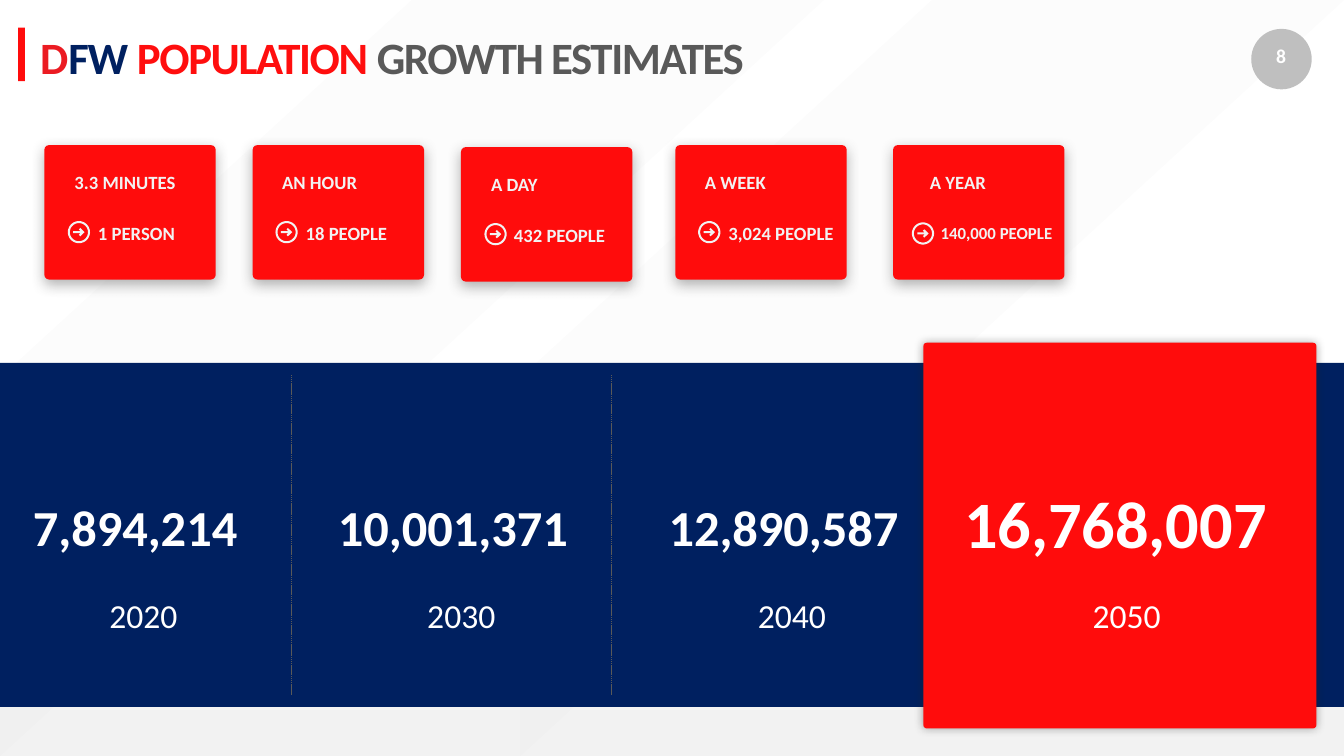
from math import cos, pi, sin

from pptx import Presentation
from pptx.dml.color import RGBColor
from pptx.enum.dml import MSO_LINE
from pptx.enum.shapes import MSO_CONNECTOR, MSO_SHAPE as SHAPE
from pptx.enum.text import MSO_AUTO_SIZE, PP_ALIGN
from pptx.oxml.ns import qn
from pptx.util import Pt
from lxml.etree import SubElement

PX = 9144  # 100 px to the inch
COLORS = {
    "white": "FFFFFF", "pale": "F2F2F2", "stripe": "D9D9D9", "silver": "BFBFBF",
    "gray": "595959", "navy": "002060", "red": "FF0C0C",
    "title_red": "FF0E0E", "crimson": "EB1B22",
    "soft_shadow": "404040", "dark_shadow": "262626",
}
RGB = {name: RGBColor.from_string(value) for name, value in COLORS.items()}

prs = Presentation()
prs.slide_width, prs.slide_height = 2000 * PX, 1125 * PX
slide = prs.slides.add_slide(prs.slide_layouts[6])
shapes = slide.shapes


def add_block(preset, x, y, w, h, color, corner=None, shadow=None):
    """Add a borderless shape; shadow is (color, blur pt, distance pt)."""
    block = shapes.add_shape(preset, x * PX, y * PX, w * PX, h * PX)
    block.fill.solid()
    block.fill.fore_color.rgb = RGB[color]
    block.line.fill.background()
    block.shadow.inherit = False
    if corner is not None:
        block.adjustments[0] = corner
    if shadow:
        tint, blur, distance = shadow
        effects = block._element.spPr.find(qn("a:effectLst"))
        outer = SubElement(effects, qn("a:outerShdw"), blurRad=str(Pt(blur)),
                           dist=str(Pt(distance)), dir="5400000", rotWithShape="0")
        shade = SubElement(outer, qn("a:srgbClr"), val=COLORS[tint])
        SubElement(shade, qn("a:alpha"), val="40000")
    return block


def add_text(runs, x, y, w, h, size, bold=True, wrap=False):
    """Add a one-paragraph text box from (text, color) runs."""
    box = shapes.add_textbox(x * PX, y * PX, w * PX, h * PX)
    frame = box.text_frame
    frame.word_wrap = wrap
    frame.auto_size = MSO_AUTO_SIZE.SHAPE_TO_FIT_TEXT
    line = frame.paragraphs[0]
    line.font.name, line.font.size, line.font.bold = "Calibri", Pt(size), bold
    for text, color in runs:
        run = line.add_run()
        run.text = text
        run.font.color.rgb = RGB[color]
    return box


# Backdrop
backdrop = slide.background.fill
backdrop.gradient()
backdrop.gradient_angle = 270
for stop, position, color in zip(backdrop.gradient_stops, (0.57, 1), ("white", "pale")):
    stop.position = position
    stop.color.rgb = RGB[color]
for x in (0, 774):
    stripe = add_block(SHAPE.DIAGONAL_STRIPE, x, 0, 1226, 1125, "stripe")
    tint = stripe._element.spPr.find(qn("a:solidFill"))[0]
    SubElement(tint, qn("a:alpha"), val="8000")

# Page number
add_block(SHAPE.OVAL, 1862, 43, 90, 90, "silver")
page_number = add_text([("8", "white")], 1852, 50, 109, 75, 21, wrap=True)
page_frame = page_number.text_frame
page_frame.auto_size = MSO_AUTO_SIZE.NONE
page_frame.margin_left = page_frame.margin_right = 30 * PX
page_frame.margin_top = page_frame.margin_bottom = 15 * PX
page_frame.paragraphs[0].alignment = PP_ALIGN.CENTER

# Forecast band
add_block(SHAPE.RECTANGLE, 0, 540, 2000, 512, "navy")
add_block(SHAPE.ROUNDED_RECTANGLE, 1374, 510, 585, 574, "red", 0.009,
          ("dark_shadow", 10, 0))
for x in (434, 910):
    divider = shapes.add_connector(MSO_CONNECTOR.STRAIGHT,
                                   x * PX, 558 * PX, x * PX, 1034 * PX)
    divider.line.color.rgb = RGB["gray"]
    divider.line.width = Pt(0.5)
    divider.line.dash_style = MSO_LINE.SQUARE_DOT
    SubElement(divider._element.spPr, qn("a:effectLst"))

forecasts = [  # year, its x, population, its x, y, w, h and size
    ("2020", 153, "7,894,214", 39, 733, 328, 101, 54),
    ("2030", 626, "10,001,371", 493, 733, 366, 101, 54),
    ("2040", 1118, "12,890,587", 985, 733, 366, 101, 54),
    ("2050", 1616, "16,768,007", 1425, 712, 475, 130, 71),
]
for year, year_x, population, x, y, w, h, size in forecasts:
    add_text([(year, "white")], year_x, 880, 123, 71, 36, bold=False)
    add_text([(population, "white")], x, y, w, h, size)

# Title
title = add_text([("D", "crimson"), ("FW ", "navy"), ("POPULATION ", "title_red"),
                  ("GROWTH ESTIMATES", "gray")], 50, 40, 1655, 91, 48, wrap=True)
for run in title.text_frame.paragraphs[0].runs:
    run._r.get_or_add_rPr().set("spc", "-150")
add_block(SHAPE.RECTANGLE, 27, 41, 10, 80, "red")

# Arrow-in-a-ring icon, in tenths of a px from its top left corner
ICON = 330
rings = [[(ICON / 2 + r * cos(pi * k / 24), ICON / 2 + r * sin(pi * k / 24))
          for k in range(48)] for r in (165, 135)]
arrow = [(80, 150), (190, 150), (165, 125), (185, 103), (250, 165),
         (185, 227), (165, 205), (190, 180), (80, 180)]

# Growth rate tiles
rates = [  # period, its width, growth, size, tile x, y, then x of period, icon, growth
    ("3.3 MINUTES", 172, "1 PERSON", 20, 66, 216, 101, 101, 136),
    ("AN HOUR", 133, "18 PEOPLE", 20, 376, 216, 410, 410, 445),
    ("A DAY", 93, "432 PEOPLE", 20, 686, 219, 721, 721, 755),
    ("A WEEK", 112, "3,024 PEOPLE", 20, 1005, 216, 1039, 1039, 1074),
    ("A YEAR", 104, "140,000 PEOPLE", 18, 1329, 216, 1374, 1357, 1390),
]
for period, period_w, growth, size, x, y, period_x, icon_x, growth_x in rates:
    add_block(SHAPE.ROUNDED_RECTANGLE, x, y, 255, 200, "red", 0.035,
              ("soft_shadow", 15, 5))
    label = add_text([(period, "pale")], period_x, y + 33, period_w, 44, 20)
    label.fill.solid()
    label.fill.fore_color.rgb = RGB["red"]

    drop = 2 if size == 18 else 0
    amount = add_text([(growth, "pale")], growth_x, y + 103 + drop,
                      x + 255 - growth_x, 50, size, wrap=True)
    amount.text_frame.paragraphs[0].line_spacing = 1.2

    outline = shapes.build_freeform(*rings[0][0], scale=PX / 10)
    outline.add_line_segments(rings[0][1:])
    for contour in (rings[1], arrow):
        outline.move_to(*contour[0])
        outline.add_line_segments(contour[1:])
    icon = outline.convert_to_shape(icon_x * PX, (y + 113 + drop) * PX)
    icon.fill.solid()
    icon.fill.fore_color.rgb = RGB["pale"]
    icon.line.fill.background()
    icon.shadow.inherit = False

prs.save("out.pptx")
